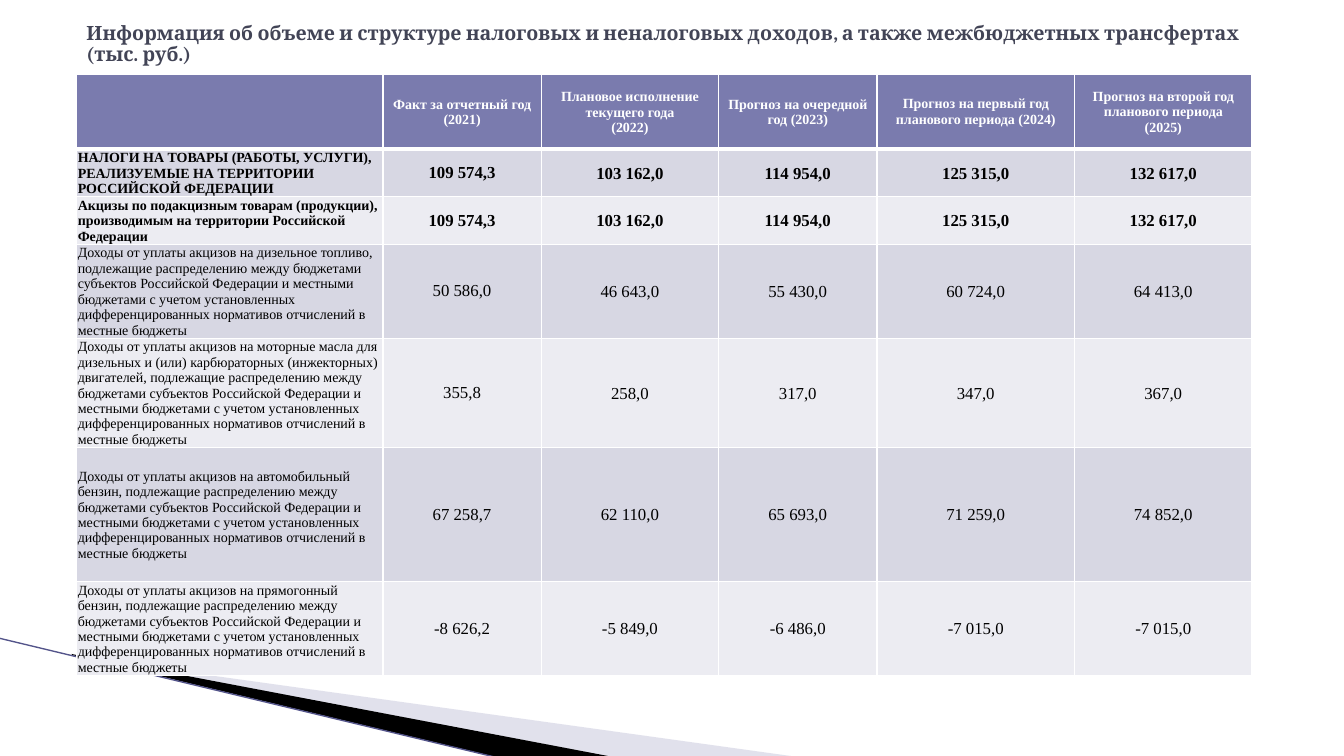
"""Build a slide with a table of excise tax revenues by year."""
from dataclasses import dataclass

from lxml.etree import SubElement
from pptx import Presentation
from pptx.dml.color import RGBColor as Rgb
from pptx.enum.shapes import MSO_CONNECTOR as Connector
from pptx.enum.text import MSO_ANCHOR as Anchor, PP_ALIGN as Align
from pptx.oxml import parse_xml
from pptx.oxml.ns import nsdecls, qn
from pptx.util import Cm, Pt


@dataclass(frozen=True)
class Theme:
    title_font: str = "Cambria"
    table_font: str = "Times New Roman"
    title_size: float = 14
    label_size: float = 10
    value_size: float = 12
    title: str = "424456"
    header: str = "7A7BAE"
    bands: tuple = ("D7D7E3", "ECECF2")
    white: str = "FFFFFF"
    black: str = "000000"
    wedge: str = "B6B6D1"
    line: str = "53548A"


THEME = Theme()

TITLE = ("Информация об объеме и структуре налоговых и неналоговых доходов, "
         "а также межбюджетных трансфертах (тыс. руб.)")
HEADERS = [
    "",
    "Факт за отчетный год (2021)",
    "Плановое исполнение текущего года\n(2022)",
    "Прогноз на очередной год (2023)",
    "Прогноз на первый год планового периода (2024)",
    "Прогноз на второй год планового периода (2025)",
]
SHARING = ("подлежащие распределению между бюджетами субъектов Российской Федерации "
           "и местными бюджетами с учетом установленных дифференцированных "
           "нормативов отчислений в местные бюджеты")
REVENUES = [
    ("НАЛОГИ НА ТОВАРЫ (РАБОТЫ, УСЛУГИ), РЕАЛИЗУЕМЫЕ НА ТЕРРИТОРИИ РОССИЙСКОЙ ФЕДЕРАЦИИ",
     "109 574,3", "103 162,0", "114 954,0", "125 315,0", "132 617,0"),
    ("Акцизы по подакцизным товарам (продукции), производимым на территории "
     "Российской Федерации",
     "109 574,3", "103 162,0", "114 954,0", "125 315,0", "132 617,0"),
    (f"Доходы от уплаты акцизов на дизельное топливо, {SHARING}",
     "50 586,0", "46 643,0", "55 430,0", "60 724,0", "64 413,0"),
    ("Доходы от уплаты акцизов на моторные масла для дизельных и (или) "
     f"карбюраторных (инжекторных) двигателей, {SHARING}",
     "355,8", "258,0", "317,0", "347,0", "367,0"),
    (f"Доходы от уплаты акцизов на автомобильный бензин, {SHARING}",
     "67 258,7", "62 110,0", "65 693,0", "71 259,0", "74 852,0"),
    (f"Доходы от уплаты акцизов на прямогонный бензин, {SHARING}",
     "-8 626,2", "-5 849,0", "-6 486,0", "-7 015,0", "-7 015,0"),
]
TOTAL_ROWS = 2
COLUMN_WIDTHS = [7.72, 3.99, 4.47, 3.99, 4.98, 4.47]
ROW_HEIGHTS = [1.88, 1.09, 1.07, 1.07, 2.13, 3.38, 1.3]
TABLE_LEFT, TABLE_TOP = 1.93, 1.88
WEDGES = [
    ([(1.85, 16.54), (20.14, 19.08), (15.44, 19.08), (1.85, 16.51)], THEME.wedge, 40),
    ([(1.8, 16.48), (15.47, 19.08), (12.6, 19.1), (1.83, 16.51)], THEME.black, 100),
]


def add_wedge(slide, points, color, opacity):
    corners = [(Cm(x), Cm(y)) for x, y in points]
    builder = slide.shapes.build_freeform(*corners[0])
    builder.add_line_segments(corners[1:], close=True)
    shape = builder.convert_to_shape()
    shape.shadow.inherit = False
    shape.line.fill.background()
    shape.fill.solid()
    shape.fill.fore_color.rgb = Rgb.from_string(color)
    if opacity < 100:
        color_node = shape.fill._xPr.find(f".//{qn('a:srgbClr')}")
        SubElement(color_node, qn("a:alpha"), val=str(opacity * 1000))


def add_accent_line(slide):
    line = slide.shapes.add_connector(
        Connector.STRAIGHT, Cm(-0.03), Cm(16.08), Cm(12.57), Cm(19.1))
    line.line.color.rgb = Rgb.from_string(THEME.line)
    line.line.width = Pt(0.95)
    SubElement(line._element.spPr, qn("a:effectLst"))


def write(paragraph, text, font_name, size, color, bold):
    for index, part in enumerate(text.split("\n")):
        if index:
            paragraph.add_line_break()
        run = paragraph.add_run()
        run.text = part
        run.font.name = font_name
        run.font.size = Pt(size)
        run.font.bold = bold
        run.font.color.rgb = Rgb.from_string(color)


def set_borders(cell, top, bottom):
    properties = cell._tc.get_or_add_tcPr()
    widths = {"lnL": 1, "lnR": 1, "lnT": top, "lnB": bottom}
    for index, (side, width) in enumerate(widths.items()):
        properties.insert(index, parse_xml(
            f'<a:{side} {nsdecls("a")} w="{Pt(width)}"><a:solidFill>'
            f'<a:srgbClr val="{THEME.white}"/></a:solidFill></a:{side}>'))


def fill_cell(cell, text, row, column):
    is_header = row == 0
    cell.fill.solid()
    cell.fill.fore_color.rgb = Rgb.from_string(
        THEME.header if is_header else THEME.bands[(row - 1) % 2])
    set_borders(cell, 3 if row == 1 else 1, 3 if is_header else 1)
    cell.vertical_anchor = Anchor.MIDDLE
    if not text:
        return
    if not (is_header and column >= 4):
        inset = Cm(0 if column == 1 and not is_header else 0.03)
        cell.margin_left = cell.margin_right = cell.margin_top = inset
        cell.margin_bottom = 0
    is_label = is_header or column == 0
    paragraph = cell.text_frame.paragraphs[0]
    paragraph.alignment = Align.CENTER if is_header or column else Align.LEFT
    write(paragraph, text, THEME.table_font,
          THEME.label_size if is_label else THEME.value_size,
          THEME.white if is_header else THEME.black, row <= TOTAL_ROWS)


def add_revenue_table(slide):
    rows = [HEADERS, *REVENUES]
    table = slide.shapes.add_table(
        len(rows), len(HEADERS), Cm(TABLE_LEFT), Cm(TABLE_TOP),
        Cm(sum(COLUMN_WIDTHS)), Cm(sum(ROW_HEIGHTS))).table
    table.horz_banding = False
    for column, width in zip(table.columns, COLUMN_WIDTHS):
        column.width = Cm(width)
    for row, height in zip(table.rows, ROW_HEIGHTS):
        row.height = Cm(height)
    for row, texts in enumerate(rows):
        for column, text in enumerate(texts):
            fill_cell(table.cell(row, column), text, row, column)


def add_title(slide):
    frame = slide.shapes.add_textbox(Cm(1.93), Cm(0.36), Cm(30), Cm(1.55)).text_frame
    frame.word_wrap = True
    frame.vertical_anchor = Anchor.MIDDLE
    paragraph = frame.paragraphs[0]
    paragraph.line_spacing = 0.9
    write(paragraph, TITLE, THEME.title_font, THEME.title_size, THEME.title, True)


def main():
    presentation = Presentation()
    presentation.slide_width, presentation.slide_height = Cm(33.87), Cm(19.05)
    slide = presentation.slides.add_slide(presentation.slide_layouts[6])
    for points, color, opacity in WEDGES:
        add_wedge(slide, points, color, opacity)
    add_accent_line(slide)
    add_revenue_table(slide)
    add_title(slide)
    presentation.save("out.pptx")


if __name__ == "__main__":
    main()
